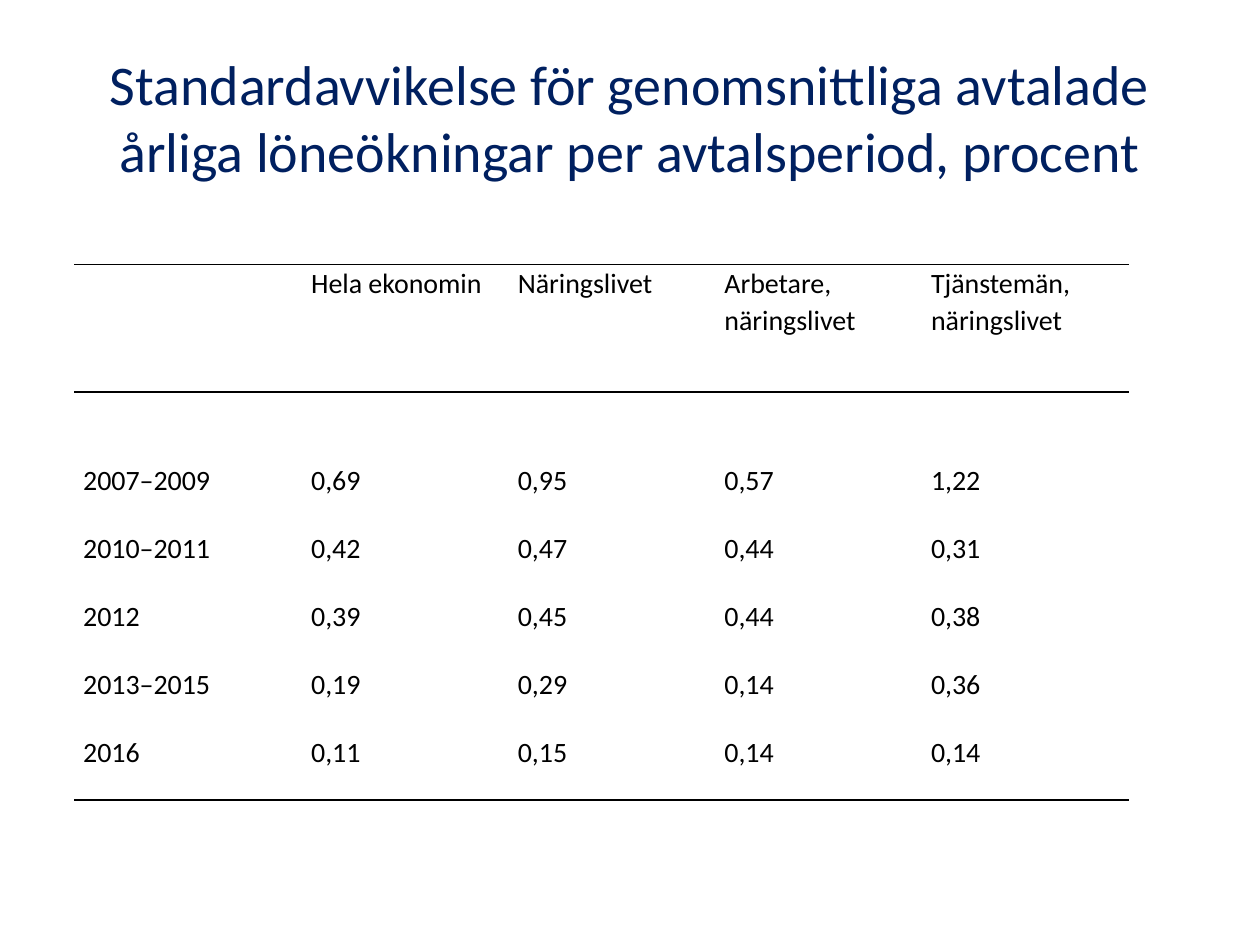
from lxml.etree import SubElement
from pptx import Presentation
from pptx.dml.color import RGBColor
from pptx.enum.text import MSO_ANCHOR, PP_ALIGN
from pptx.oxml.ns import qn
from pptx.util import Inches, Pt

FONT = "Calibri"
TITLE = "Standardavvikelse för genomsnittliga avtalade årliga löneökningar per avtalsperiod, procent"
HEADER = ["", "Hela ekonomin", "Näringslivet", "Arbetare, näringslivet", "Tjänstemän, näringslivet"]
DEVIATIONS = [
    ["2007–2009", "0,69", "0,95", "0,57", "1,22"],
    ["2010–2011", "0,42", "0,47", "0,44", "0,31"],
    ["2012", "0,39", "0,45", "0,44", "0,38"],
    ["2013–2015", "0,19", "0,29", "0,14", "0,36"],
    ["2016", "0,11", "0,15", "0,14", "0,14"],
]
SPACER = [""] * len(HEADER)
ROWS = [HEADER, SPACER, *DEVIATIONS]
COLUMN_WIDTHS = [1.81] + [1.64] * 4
ROW_HEIGHTS = [1.01] + [0.54] * 6
RULED_EDGES = {0, 1, len(ROWS)}  # horizontal grid lines, counted from the top


def style_font(font, size, color):
    font.name = FONT
    font.size = Pt(size)
    font.color.rgb = RGBColor.from_string(color)


def add_title(page):
    title = page.shapes.title
    title.left, title.top, title.width, title.height = map(Inches, (0.5, 0.3, 9, 1.25))
    frame = title.text_frame
    frame.text = TITLE
    frame.vertical_anchor = MSO_ANCHOR.MIDDLE
    para = frame.paragraphs[0]
    para.alignment = PP_ALIGN.CENTER
    style_font(para.font, 32, "002060")


def set_border(cell, side, color=None):
    """Draw a one-point line on the given side, or none without a color."""
    line = SubElement(cell._tc.get_or_add_tcPr(), qn(f"a:ln{side}"), w=str(Pt(1)))
    if color:
        fill = SubElement(line, qn("a:solidFill"))
        SubElement(fill, qn("a:srgbClr"), val=color)
    else:
        SubElement(line, qn("a:noFill"))


def fill_cell(cell, text, row):
    for side in "LR":
        set_border(cell, side)
    for side, edge in (("T", row), ("B", row + 1)):
        set_border(cell, side, "000000" if edge in RULED_EDGES else None)
    cell.fill.background()
    cell.margin_left = cell.margin_right = Inches(0.07)
    cell.margin_top = Inches(0.01 if row else 0)
    cell.margin_bottom = 0
    cell.text = text
    para = cell.text_frame.paragraphs[0]
    para.line_spacing = 1.07
    para.space_after = Pt(8)
    style_font(para.font, 16, "000000")


def add_deviation_table(page):
    frame = page.shapes.add_table(
        len(ROWS), len(HEADER), Inches(0.59), Inches(2.1),
        Inches(sum(COLUMN_WIDTHS)), Inches(sum(ROW_HEIGHTS)))
    table = frame.table
    table.first_row = table.horz_banding = False
    for column, width in zip(table.columns, COLUMN_WIDTHS):
        column.width = Inches(width)
    for row, height in zip(table.rows, ROW_HEIGHTS):
        row.height = Inches(height)
    for r, texts in enumerate(ROWS):
        for c, text in enumerate(texts):
            fill_cell(table.cell(r, c), text, r)
    spacer = ROWS.index(SPACER)
    table.cell(spacer, 0).merge(table.cell(spacer, len(HEADER) - 1))


def main():
    deck = Presentation()
    deck.slide_width, deck.slide_height = Inches(10), Inches(7.5)
    page = deck.slides.add_slide(deck.slide_layouts.get_by_name("Title Only"))
    add_title(page)
    add_deviation_table(page)
    deck.save("out.pptx")


if __name__ == "__main__":
    main()
